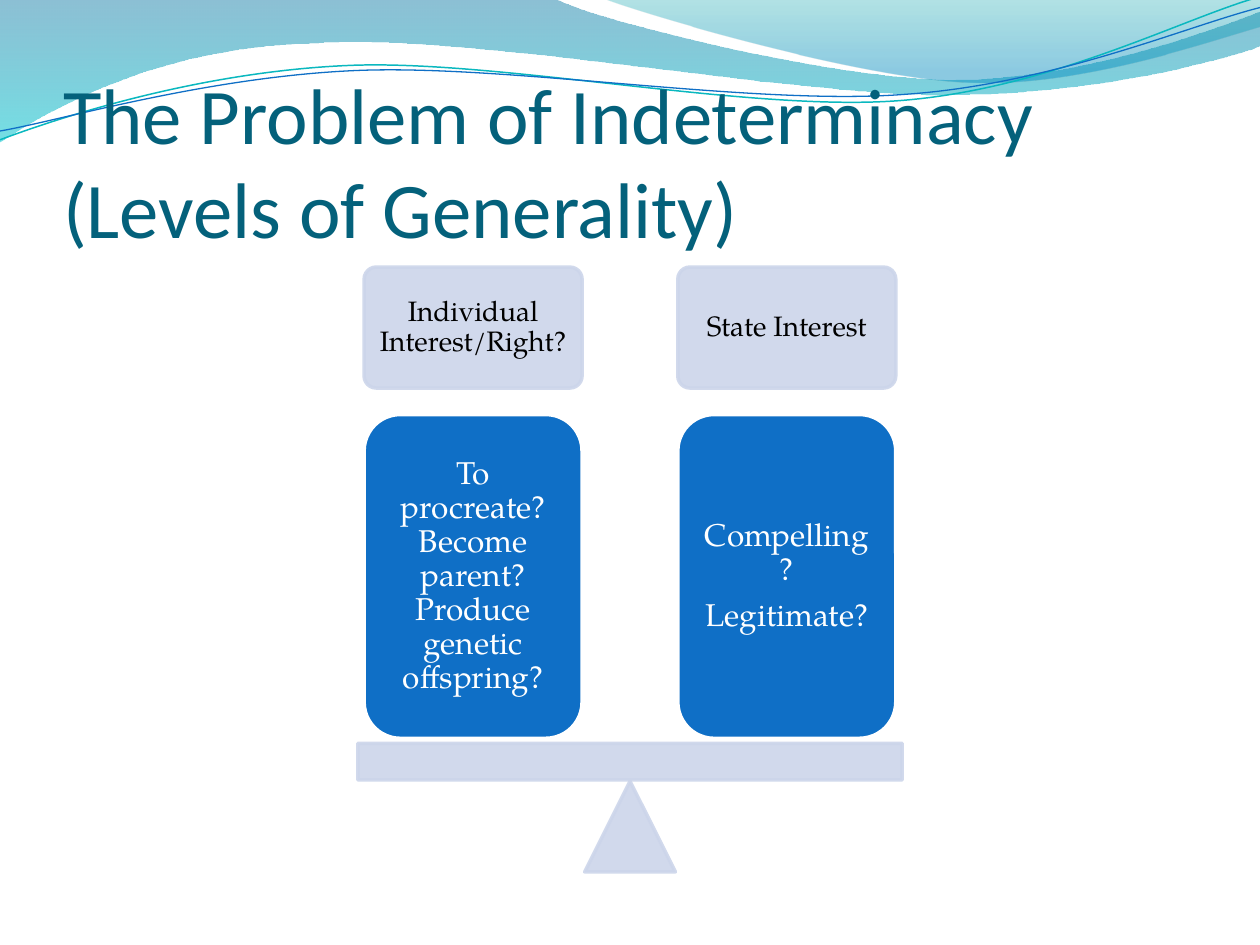
"""Builds the slide on the problem of indeterminacy, with a balance of interests."""
from lxml import etree
from pptx import Presentation
from pptx.dml.color import RGBColor
from pptx.enum.shapes import MSO_SHAPE as Shape
from pptx.enum.text import MSO_ANCHOR as Anchor, PP_ALIGN as Align
from pptx.oxml.ns import qn
from pptx.util import Inches, Pt

PALE, BLUE, WHITE = "CCD5EA", "0F6FC6", "FFFFFF"
FONT = "TeX Gyre Pagella"


def rgb(color):
    return RGBColor.from_string(color)


def draw_outline(shapes, start, steps, close):
    points = [(step[i], step[i + 1]) for step in steps for i in range(0, len(step), 2)]
    builder = shapes.build_freeform(Inches(start[0]), Inches(start[1]))
    builder.add_line_segments([(Inches(x), Inches(y)) for x, y in points], close=close)
    shape = builder.convert_to_shape()
    shape.shadow.inherit = False
    segments = iter(list(shape.element.iter(qn("a:lnTo"))))
    for step in steps:
        group = [next(segments) for _ in range(len(step) // 2)]
        if len(group) == 3:
            bend = etree.Element(qn("a:cubicBezTo"))
            group[0].addprevious(bend)
            for segment in group:
                bend.append(segment[0])
                segment.getparent().remove(segment)
    return shape


presentation = Presentation()
presentation.slide_width, presentation.slide_height = Inches(10), Inches(7.5)
slide = presentation.slides.add_slide(presentation.slide_layouts[5])
shapes = slide.shapes

waves = [
    ((0, 0), [(4.4, -0.01), (4.76, 0.17, 6.64, 0.63, 7.58, 0.63), (8.53, 0.63, 9.58, 0.26, 10, 0.09),
              (10.01, 0.36), (9.83, 0.44, 8.7, 0.76, 7.46, 0.75), (6.22, 0.75, 3.82, 0.28, 2.57, 0.34),
              (1.29, 0.36, 0.46, 0.83, -0.01, 1.13), (0, 0)],
     [(0, "0074A1", 45), (1, "00C6CF", 55)]),
    ((4.79, -0.01), [(5.09, 0.11, 6.82, 0.62, 7.69, 0.65), (8.56, 0.69, 9.61, 0.32, 10, 0.21),
                     (10, 0), (4.79, -0.01)],
     [(0, "00A1A9", 30), (0.8, "008BBF", 45)]),
]
for start, steps, stops in waves:
    wave = draw_outline(shapes, start, steps, True)
    wave.line.fill.background()
    wave.fill.gradient()
    wave.fill.gradient_angle = 270
    for stop, (position, color, _) in zip(wave.fill.gradient_stops, stops):
        stop.position = position
        stop.color.rgb = rgb(color)
    for node, (_, _, opacity) in zip(wave.element.spPr.iter(qn("a:srgbClr")), stops):
        etree.SubElement(node, qn("a:alpha")).set("val", str(opacity * 1000))

curves = [
    ((0, 1.11), [(0.48, 0.93, 1.58, 0.57, 2.77, 0.52), (3.95, 0.47, 5.93, 0.89, 7.13, 0.8),
                 (8.33, 0.71, 9.38, 0.15, 9.98, -0.02)], "0AB8BF", 0.85),
    ((0, 1.04), [(0.47, 0.96, 1.64, 0.61, 2.83, 0.56), (4.03, 0.51, 5.97, 0.84, 7.17, 0.75),
                 (8.36, 0.67, 9.41, 0.21, 10, 0.06)], BLUE, 0.75),
]
for start, steps, color, width in curves:
    curve = draw_outline(shapes, start, steps, False)
    curve.fill.background()
    curve.line.color.rgb = rgb(color)
    curve.line.width = Pt(width)

title = shapes.title
title.element.getparent().append(title.element)
title.left, title.top, title.width, title.height = [Inches(v) for v in (0.5, 0.77, 9, 1.25)]
title.text = "The Problem of Indeterminacy (Levels of Generality)"
title_format = {"margin_left": 0, "margin_right": 0, "margin_top": Inches(0.05), "margin_bottom": 0,
                "vertical_anchor": Anchor.BOTTOM, "word_wrap": True}
for name, value in title_format.items():
    setattr(title.text_frame, name, value)
title_paragraph = title.text_frame.paragraphs[0]
title_paragraph.alignment = Align.LEFT
title_paragraph.font.name, title_paragraph.font.size = "Calibri", Pt(45)
title_paragraph.font.color.rgb = rgb("04617B")

left, right = 2.89, 5.38
header = {"top": 2.12, "height": 0.96, "corner": 0.1, "fill": PALE, "line": PALE, "size": 16, "color": "000000"}
weight = {"top": 3.29, "height": 2.57, "corner": 0.1667, "fill": BLUE, "line": WHITE, "size": 18, "color": WHITE}
cards = [
    (left, header, ["Individual Interest/Right?"]),
    (right, header, ["State Interest"]),
    (left, weight, ["To procreate? Become parent? Produce genetic offspring?"]),
    (right, weight, ["Compelling?", "Legitimate?"]),
]
balance = []
for x, style, lines in cards:
    card = shapes.add_shape(Shape.ROUNDED_RECTANGLE, Inches(x), Inches(style["top"]),
                            Inches(1.73), Inches(style["height"]))
    card.adjustments[0] = style["corner"]
    balance.append((card, style["fill"], style["line"]))
    frame = card.text_frame
    for side in ("left", "right", "top", "bottom"):
        setattr(frame, f"margin_{side}", Inches(0.08))
    frame.word_wrap, frame.vertical_anchor = True, Anchor.MIDDLE
    frame.text = "\n".join(lines)
    paragraph_format = {"alignment": Align.CENTER, "line_spacing": 0.9,
                        "space_after": Pt(round(style["size"] * 0.37))}
    for paragraph in frame.paragraphs:
        for name, value in paragraph_format.items():
            setattr(paragraph, name, value)
        paragraph.font.name, paragraph.font.size = FONT, Pt(style["size"])
        paragraph.font.color.rgb = rgb(style["color"])

for kind, box in [(Shape.ISOSCELES_TRIANGLE, (4.64, 6.2, 0.72, 0.72)), (Shape.RECTANGLE, (2.84, 5.9, 4.32, 0.29))]:
    balance.append((shapes.add_shape(kind, *[Inches(v) for v in box]), PALE, PALE))

for shape, fill, line in balance:
    shape.shadow.inherit = False
    shape.fill.solid()
    shape.fill.fore_color.rgb = rgb(fill)
    shape.line.color.rgb = rgb(line)
    shape.line.width = Pt(2)
    if fill == PALE:
        for node in shape.element.spPr.iter(qn("a:srgbClr")):
            etree.SubElement(node, qn("a:alpha")).set("val", "90000")

presentation.save("out.pptx")
